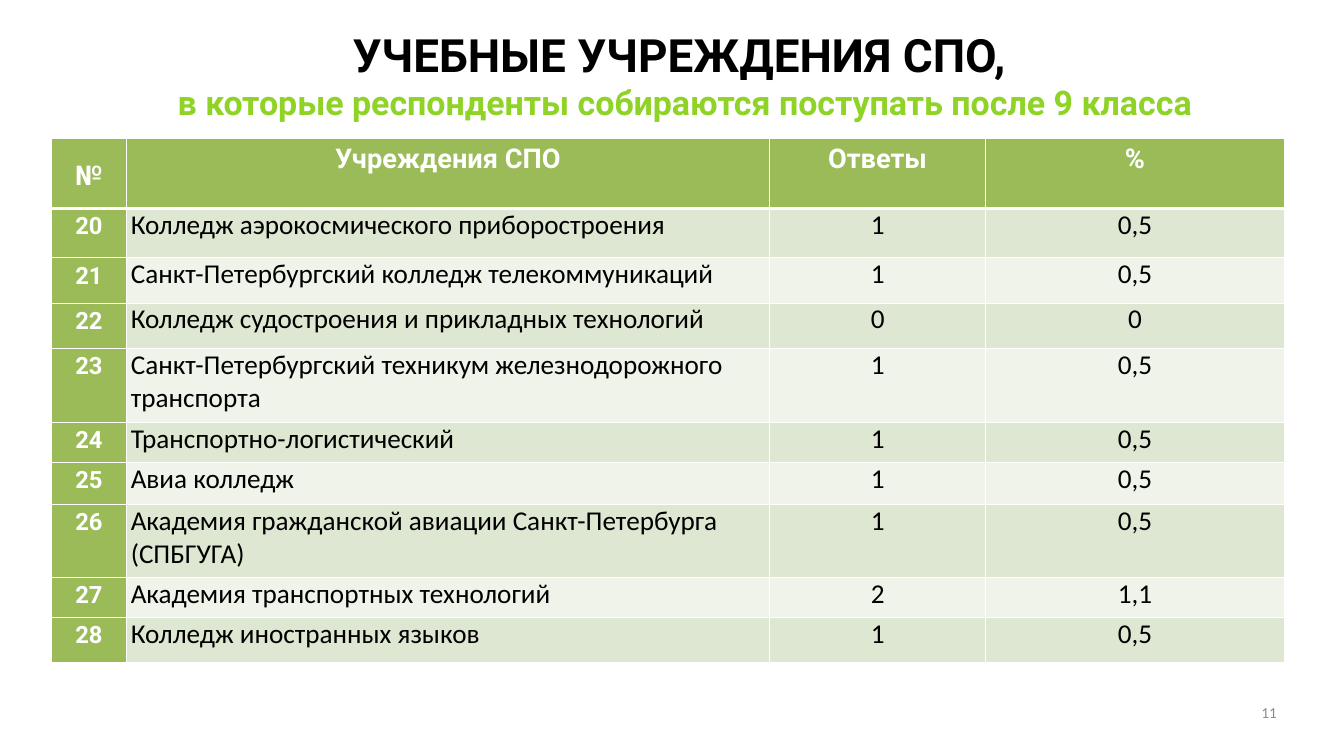
from dataclasses import dataclass

from lxml.etree import SubElement
from pptx import Presentation
from pptx.dml.color import RGBColor
from pptx.enum.text import MSO_ANCHOR as Anchor, MSO_AUTO_SIZE as AutoSize, PP_ALIGN as Align
from pptx.oxml.ns import qn
from pptx.util import Pt

WHITE, BLACK, GRAY = "FFFFFF", "000000", "8C8C8C"
GREEN, LIME = "9BBB59", "8FD327"
BANDS = ("DEE7D1", "EFF3EA")
COLUMN_WIDTHS = (88.6, 757.4, 254.9, 351.4)
HEADER_HEIGHT = 82.1
HEADINGS = ("№", "Учреждения СПО", "Ответы", "%")
FIRST_NUMBER = 20


@dataclass(frozen=True)
class Style:
    size: float
    color: str
    font: str = "Roboto"
    bold: bool = True


@dataclass(frozen=True)
class College:
    name: str
    answers: str
    percent: str
    height: float


TITLE = Style(54, BLACK)
SUBTITLE = Style(40, LIME)
HEADING = Style(32, WHITE)
NUMBER = Style(28, WHITE)
BODY = Style(32, BLACK, "Calibri", False)
PAGE = Style(18, GRAY, "Calibri", False)

COLLEGES = (
    College("Колледж аэрокосмического приборостроения", "1", "0,5", 58.3),
    College("Санкт-Петербургский колледж телекоммуникаций", "1", "0,5", 53.3),
    College("Колледж судостроения и прикладных технологий", "0", "0", 53.3),
    College("Санкт-Петербургский техникум железнодорожного транспорта", "1", "0,5", 87.1),
    College("Транспортно-логистический", "1", "0,5", 47.5),
    College("Авиа колледж", "1", "0,5", 49.7),
    College("Академия гражданской авиации Санкт-Петербурга (СПБГУГА)", "1", "0,5", 85.7),
    College("Академия транспортных технологий", "2", "1,1", 46.8),
    College("Колледж иностранных языков", "1", "0,5", 53.3),
)


def rgb(color: str) -> RGBColor:
    return RGBColor.from_string(color)


def add_run(paragraph, text: str, style: Style) -> None:
    run = paragraph.add_run()
    run.text = text
    run.font.size = Pt(style.size)
    run.font.name = style.font
    run.font.bold = style.bold
    run.font.color.rgb = rgb(style.color)


def set_frame(frame, anchor: Anchor) -> None:
    frame.margin_left = frame.margin_right = frame.margin_top = frame.margin_bottom = 0
    frame.word_wrap = True
    frame.vertical_anchor = anchor
    frame.auto_size = AutoSize.SHAPE_TO_FIT_TEXT


def place(shape, left: float, top: float, width: float, height: float) -> None:
    shape.left, shape.top = Pt(left), Pt(top)
    shape.width, shape.height = Pt(width), Pt(height)


def add_borders(cell, top: float, bottom: float) -> None:
    properties = cell._tc.get_or_add_tcPr()
    for side, width in (("L", 1), ("R", 1), ("T", top), ("B", bottom)):
        line = SubElement(properties, qn(f"a:ln{side}"), w=str(Pt(width)))
        fill = SubElement(line, qn("a:solidFill"))
        SubElement(fill, qn("a:srgbClr"), val=WHITE)


def fill_cell(cell, text: str, style: Style, fill: str, align: Align,
              margin: float = 5, top: float = 1, bottom: float = 1) -> None:
    add_borders(cell, top, bottom)
    cell.fill.solid()
    cell.fill.fore_color.rgb = rgb(fill)
    cell.margin_left = cell.margin_right = Pt(margin)
    cell.margin_top = cell.margin_bottom = 0
    paragraph = cell.text_frame.paragraphs[0]
    paragraph.alignment = align
    if style.bold:
        paragraph.line_spacing = 1.15
    add_run(paragraph, text, style)


def add_title(slide) -> None:
    title = slide.shapes.title
    place(title, 101.5, 31, 1410.5, 113.8)
    set_frame(title.text_frame, Anchor.MIDDLE)
    paragraph = title.text_frame.paragraphs[0]
    paragraph.alignment = Align.CENTER
    add_run(paragraph, "УЧЕБНЫЕ УЧРЕЖДЕНИЯ СПО, ", TITLE)
    paragraph.add_line_break()
    add_run(paragraph, "в которые респонденты собираются поступать после 9 класса", SUBTITLE)


def add_colleges(slide) -> None:
    heights = [HEADER_HEIGHT] + [college.height for college in COLLEGES]
    table = slide.shapes.add_table(
        len(heights), len(COLUMN_WIDTHS), Pt(60.5), Pt(163.4),
        Pt(sum(COLUMN_WIDTHS)), Pt(sum(heights))).table
    table.first_col = True
    for column, width in zip(table.columns, COLUMN_WIDTHS):
        column.width = Pt(width)
    for row, height in zip(table.rows, heights):
        row.height = Pt(height)

    # Header row
    for column, heading in enumerate(HEADINGS):
        fill_cell(table.cell(0, column), heading, HEADING, GREEN, Align.CENTER,
                  margin=3, bottom=3)
    table.cell(0, 0).vertical_anchor = Anchor.MIDDLE

    # College rows
    for index, college in enumerate(COLLEGES):
        band = BANDS[index % 2]
        contents = (
            (str(FIRST_NUMBER + index), NUMBER, GREEN, Align.CENTER),
            (college.name, BODY, band, Align.LEFT),
            (college.answers, BODY, band, Align.CENTER),
            (college.percent, BODY, band, Align.CENTER),
        )
        for column, content in enumerate(contents):
            fill_cell(table.cell(index + 1, column), *content, top=3 if index == 0 else 1)


def add_page_number(slide) -> None:
    page = slide.shapes.add_textbox(Pt(1139.8), Pt(828), Pt(364.3), Pt(44.6))
    set_frame(page.text_frame, Anchor.TOP)
    paragraph = page.text_frame.paragraphs[0]
    paragraph.alignment = Align.RIGHT
    add_run(paragraph, "11", PAGE)


def main() -> None:
    deck = Presentation()
    deck.slide_width, deck.slide_height = Pt(1583.3), Pt(890.6)
    slide = deck.slides.add_slide(deck.slide_layouts[5])
    add_title(slide)
    add_colleges(slide)
    add_page_number(slide)
    deck.save("out.pptx")


if __name__ == "__main__":
    main()
